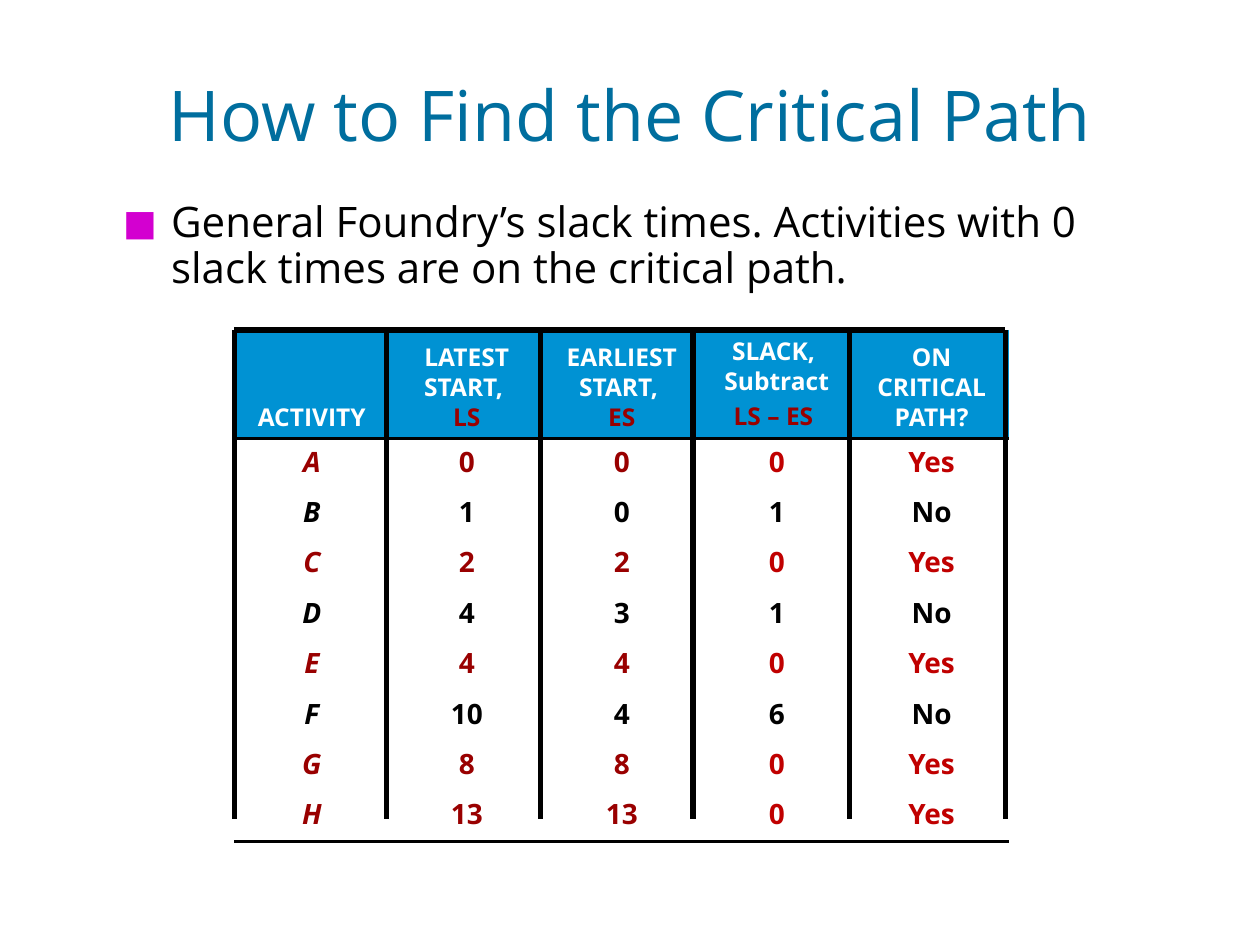
from copy import deepcopy
from dataclasses import dataclass

from lxml import etree
from pptx import Presentation, util as u
from pptx.dml.color import RGBColor
from pptx.enum import text
from pptx.oxml.ns import qn


@dataclass(frozen=True)
class Theme:
    font: str = "Open Sans"
    title: str = "006E9E"
    ink: str = "000000"
    bullet: str = "D300D0"
    header: str = "0092D3"
    header_ink: str = "FFFFFF"
    critical: str = "990000"
    result: str = "C00000"
    title_size: int = 40
    body_size: int = 24
    header_size: int = 14
    cell_size: int = 16
    border: float = 2.25
    rule: float = 3


T = Theme()
WIDTH, HEIGHT = 10, 7.5
LEFT, TOP = 1.86, 2.62
COL, HEADER_ROW, ROW = 1.23, 0.86, 0.4
RULES = (1.86, 3.07, 4.29, 5.5, 6.74, 7.98)
RULE_END = 6.5
NO_STYLE = "{2D5ABB26-0587-4C30-8999-92F81FD0307C}"

HEADERS = (
    [[("ACTIVITY", T.header_ink)]],
    [[("LATEST START, \n", T.header_ink), ("LS", T.critical)]],
    [[("EARLIEST START, \n", T.header_ink), ("ES", T.critical)]],
    [[("SLACK, \nSubtract", T.header_ink)], [("LS – ES ", T.critical)]],
    [[("ON CRITICAL PATH?", T.header_ink)]],
)
ACTIVITIES = (
    ("A", 0, 0), ("B", 1, 0), ("C", 2, 2), ("D", 4, 3),
    ("E", 4, 4), ("F", 10, 4), ("G", 8, 8), ("H", 13, 13),
)


def apply(obj, values):
    for name, value in values.items():
        setattr(obj, name, value)


def child(parent, tag, **attrs):
    return etree.SubElement(parent, qn(tag), attrs)


def space_paragraph(p, align):
    apply(p, {"alignment": align, "line_spacing": 0.9, "space_before": u.Pt(0)})
    before = p._p.pPr.find(qn("a:spcBef"))
    before.remove(before[0])
    child(before, "a:spcPct", val="20000")


def add_runs(p, runs, size, bold=False, italic=False):
    for content, color in runs:
        for i, line in enumerate(content.split("\n")):
            if i:
                p.add_line_break()
                p._p.findall(qn("a:br"))[-1].append(deepcopy(r._r.rPr))
            if line:
                r = p.add_run()
                r.text = line
                apply(r.font, {"name": T.font, "size": u.Pt(size),
                               "bold": bold, "italic": italic})
                r.font.color.rgb = RGBColor.from_string(color)


def write(tf, paragraphs, size, align=text.PP_ALIGN.CENTER, **style):
    for i, runs in enumerate(paragraphs):
        p = tf.add_paragraph() if i else tf.paragraphs[0]
        space_paragraph(p, align)
        add_runs(p, runs, size, **style)


def add_title(slide, content):
    sp = slide.shapes.title
    apply(sp, {"left": u.Inches(0.75), "top": u.Inches(0.43),
               "width": u.Inches(8.5), "height": u.Inches(1.03)})
    sp.text_frame.vertical_anchor = text.MSO_ANCHOR.MIDDLE
    write(sp.text_frame, [[(content, T.title)]], T.title_size)


def add_bullet(slide, content):
    sp = slide.shapes.add_textbox(*map(u.Inches, (0.88, 1.55, 8.5, 0.56)))
    tf = sp.text_frame
    tf.word_wrap = True
    write(tf, [[(content, T.ink)]], T.body_size, text.PP_ALIGN.LEFT)
    pPr = tf.paragraphs[0]._p.pPr
    indent = u.Inches(0.38)
    pPr.set("marL", str(indent))
    pPr.set("indent", str(-indent))
    child(child(pPr, "a:buClr"), "a:srgbClr", val=T.bullet)
    child(pPr, "a:buSzPct", val="85000")
    child(pPr, "a:buFont", typeface=T.font)
    child(pPr, "a:buChar", char="■")


def set_borders(cell, drawn):
    for side in "LRTB":
        ln = child(cell._tc.get_or_add_tcPr(), f"a:ln{side}", w=str(u.Pt(T.border)))
        if side in drawn:
            child(child(ln, "a:solidFill"), "a:srgbClr", val=T.ink)
        else:
            child(ln, "a:noFill")


def fill_header(table):
    for col, paragraphs in enumerate(HEADERS):
        cell = table.cell(0, col)
        write(cell.text_frame, paragraphs, T.header_size, bold=True)
        if len(paragraphs) == 1:
            cell.vertical_anchor = text.MSO_ANCHOR.BOTTOM
        set_borders(cell, "B")
        cell.fill.solid()
        cell.fill.fore_color.rgb = RGBColor.from_string(T.header)


def fill_activity(table, row, name, latest, earliest):
    slack = latest - earliest
    values = (name, latest, earliest, slack, "No" if slack else "Yes")
    borders = {1: "T", len(ACTIVITIES): "B"}.get(row, "")
    for col, value in enumerate(values):
        cell = table.cell(row, col)
        marked = T.critical if col < 3 else T.result
        write(cell.text_frame, [[(str(value), T.ink if slack else marked)]],
              T.cell_size, bold=True, italic=col == 0)
        set_borders(cell, borders)


def add_slack_table(slide):
    rows, cols = len(ACTIVITIES) + 1, len(HEADERS)
    box = (LEFT, TOP, cols * COL, HEADER_ROW + len(ACTIVITIES) * ROW)
    table = slide.shapes.add_table(rows, cols, *map(u.Inches, box)).table
    apply(table, {"first_row": False, "horz_banding": False})
    table._tbl.tblPr.find(qn("a:tableStyleId")).text = NO_STYLE
    for column in table.columns:
        column.width = u.Inches(COL)
    for i, row in enumerate(table.rows):
        row.height = u.Inches(ROW if i else HEADER_ROW)
    fill_header(table)
    for i, activity in enumerate(ACTIVITIES, 1):
        fill_activity(table, i, *activity)


def add_rule(slide, *ends):
    line = slide.shapes.add_connector(1, *map(u.Inches, ends))
    line.line.width = u.Pt(T.rule)
    line.line.color.rgb = RGBColor.from_string(T.ink)
    child(line._element.spPr, "a:effectLst")


def main():
    prs = Presentation()
    apply(prs, {"slide_width": u.Inches(WIDTH), "slide_height": u.Inches(HEIGHT)})
    slide = prs.slides.add_slide(prs.slide_layouts[5])
    add_title(slide, "How to Find the Critical Path")
    add_bullet(slide, "General Foundry’s slack times. Activities with 0 "
                      "slack times are on the critical path.")
    add_slack_table(slide)
    for x in RULES:
        add_rule(slide, x, TOP, x, RULE_END)
    add_rule(slide, RULES[0], TOP, RULES[-1], TOP)
    prs.save("out.pptx")


if __name__ == "__main__":
    main()
